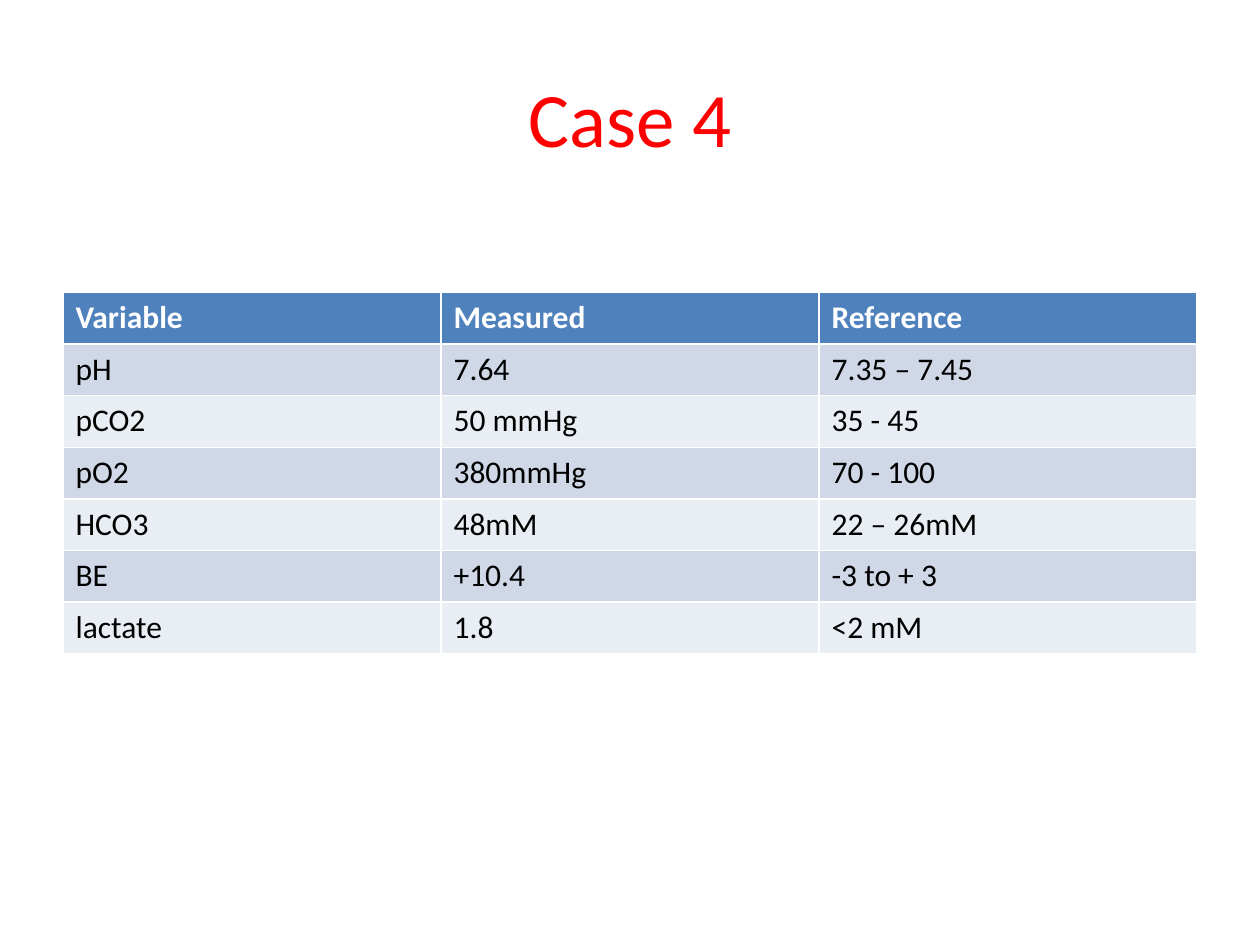
"""Build the Case 4 blood gas slide."""
from dataclasses import dataclass

from pptx import Presentation
from pptx import util as u
from pptx.dml.color import RGBColor
from pptx.enum import text as t
from pptx.slide import Slide
from pptx.text.text import TextFrame


@dataclass(frozen=True)
class Theme:
    """Colours, font and type sizes."""

    font: str = "Calibri"
    title_size: int = 44
    table_size: int = 18
    title: str = "FF0000"
    header: str = "4F81BD"
    header_text: str = "FFFFFF"
    body_text: str = "000000"
    bands: tuple[str, str] = ("D0D8E8", "E9EDF4")


@dataclass(frozen=True)
class Measurement:
    """One row of the blood gas table."""

    variable: str
    measured: str
    reference: str


THEME = Theme()
HEADER = Measurement("Variable", "Measured", "Reference")
RESULTS = [
    Measurement("pH", "7.64", "7.35 – 7.45"),
    Measurement("pCO2", "50 mmHg", "35 - 45"),
    Measurement("pO2", "380mmHg", "70 - 100"),
    Measurement("HCO3", "48mM", "22 – 26mM"),
    Measurement("BE", "+10.4", "-3 to + 3"),
    Measurement("lactate", "1.8", "<2 mM"),
]
LEFT, WIDTH = u.Inches(0.5), u.Inches(9)
TABLE_TOP, ROW_HEIGHT = u.Inches(2.32), u.Inches(0.41)


def write_text(frame: TextFrame, content: str, *, size: int, color: str,
               bold: bool = False, align: t.PP_ALIGN = t.PP_ALIGN.LEFT) -> None:
    """Write one formatted paragraph into a text frame."""
    paragraph = frame.paragraphs[0]
    paragraph.alignment = align
    run = paragraph.add_run()
    run.text = content
    run.font.name = THEME.font
    run.font.size = u.Pt(size)
    run.font.bold = bold
    run.font.color.rgb = RGBColor.from_string(color)


def add_title(slide: Slide, content: str) -> None:
    """Place and fill the title placeholder."""
    title = slide.shapes.title
    title.left, title.top = LEFT, u.Inches(0.3)
    title.width, title.height = WIDTH, u.Inches(1.25)
    title.text_frame.vertical_anchor = t.MSO_ANCHOR.MIDDLE
    write_text(title.text_frame, content, size=THEME.title_size,
               color=THEME.title, align=t.PP_ALIGN.CENTER)


def add_results_table(slide: Slide, rows: list[Measurement]) -> None:
    """Draw a header row followed by banded rows of measurements."""
    table = slide.shapes.add_table(len(rows), 3, LEFT, TABLE_TOP, WIDTH,
                                   ROW_HEIGHT * len(rows)).table
    for index, row in enumerate(rows):
        is_header = index == 0
        fill = THEME.header if is_header else THEME.bands[(index - 1) % 2]
        color = THEME.header_text if is_header else THEME.body_text
        values = (row.variable, row.measured, row.reference)
        for cell, value in zip(table.rows[index].cells, values):
            cell.fill.solid()
            cell.fill.fore_color.rgb = RGBColor.from_string(fill)
            write_text(cell.text_frame, value, size=THEME.table_size,
                       color=color, bold=is_header)


def main() -> None:
    """Build and save the presentation."""
    presentation = Presentation()
    presentation.slide_width = u.Inches(10)
    presentation.slide_height = u.Inches(7.5)
    slide = presentation.slides.add_slide(presentation.slide_layouts[5])
    add_title(slide, "Case 4")
    add_results_table(slide, [HEADER, *RESULTS])
    presentation.save("out.pptx")


if __name__ == "__main__":
    main()
